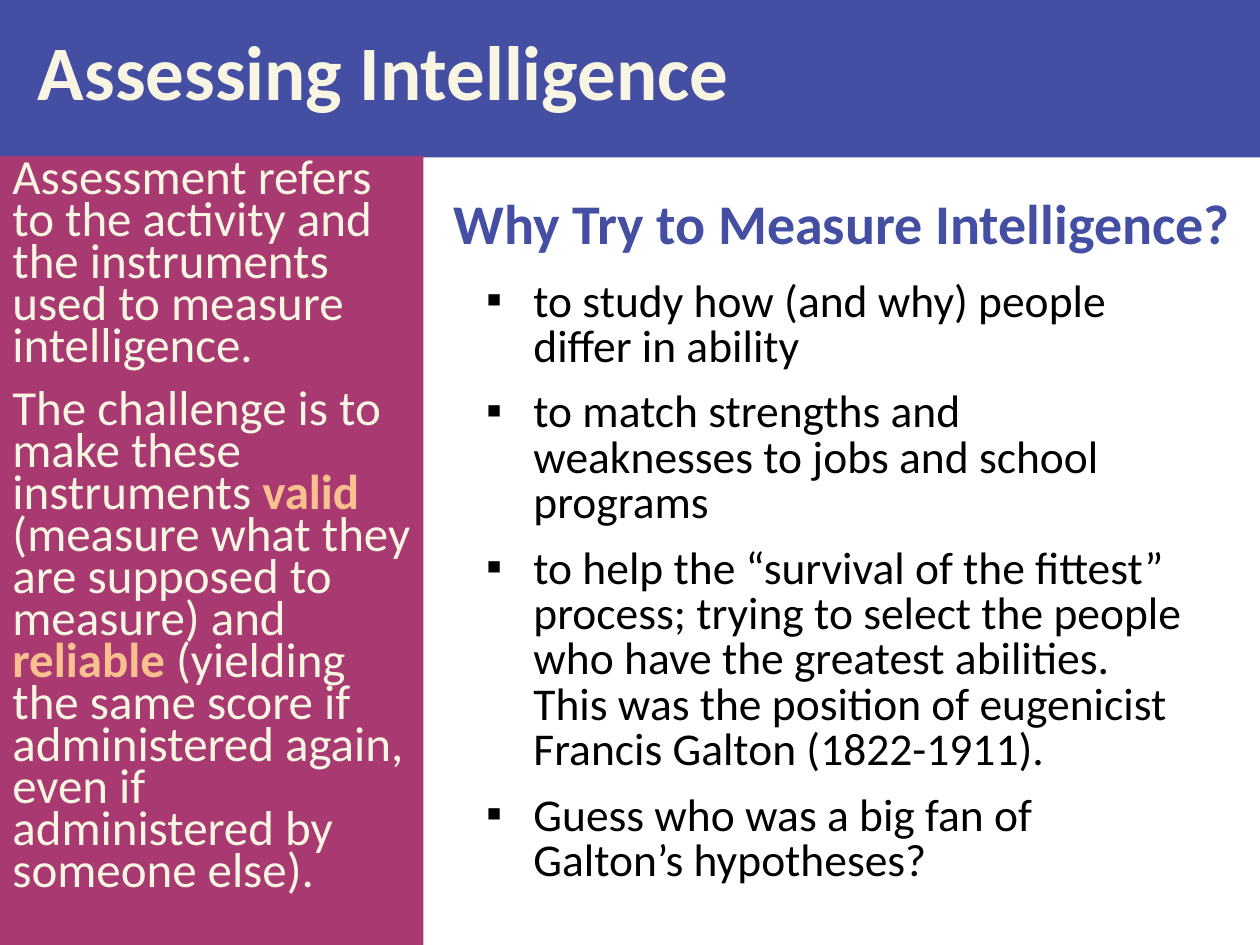
from lxml import etree
from pptx import Presentation
from pptx.dml.color import RGBColor
from pptx.enum.text import MSO_ANCHOR, MSO_AUTO_SIZE, PP_ALIGN
from pptx.oxml.ns import qn
from pptx.util import Pt

LEFT = PP_ALIGN.LEFT
TOP, MIDDLE = MSO_ANCHOR.TOP, MSO_ANCHOR.MIDDLE
NO_AUTOFIT = MSO_AUTO_SIZE.NONE
TITLE_ONLY = 5

FONT = "Calibri"
BLUE, PLUM, CREAM, PEACH, BLACK = "444EA2", "A93971", "F8F6E3", "FAC090", "000000"
BULLET_INDENT = 27

# Each piece of sidebar text is (wording, is a key term)
SIDEBAR = [
    [("Assessment refers to the activity and the instruments used to measure "
      "intelligence.", False)],
    [("The challenge is to make these instruments ", False),
     ("valid ", True),
     ("(measure what they are supposed to measure) and ", False),
     ("reliable ", True),
     ("(yielding the same score if administered again, even if administered "
      "by someone else).", False)],
]
REASONS = [
    "to study how (and why) people differ in ability",
    "to match strengths and weaknesses to jobs and school programs",
    "to help the “survival of the fittest” process; trying to select the people "
    "who have the greatest abilities. This was the position of eugenicist "
    "Francis Galton (1822-1911).",
    "Guess who was a big fan of Galton’s hypotheses?",
]


def color(hex_string):
    return RGBColor.from_string(hex_string)


def place(shape, left, top, width, height, anchor=TOP, fill=None):
    """Position a text shape, fill it and prepare its text frame."""
    shape.left, shape.top = Pt(left), Pt(top)
    shape.width, shape.height = Pt(width), Pt(height)
    if fill:
        shape.fill.solid()
        shape.fill.fore_color.rgb = color(fill)
    frame = shape.text_frame
    frame.word_wrap = True
    frame.auto_size = NO_AUTOFIT
    frame.vertical_anchor = anchor
    return frame


def add_text_area(slide, left, top, width, height, **options):
    box = slide.shapes.add_textbox(0, 0, 0, 0)
    return place(box, left, top, width, height, **options)


def format_run(run, size, hex_string, bold=False):
    run.font.name = FONT
    run.font.size = Pt(size)
    run.font.bold = bold
    run.font.color.rgb = color(hex_string)


def set_line(frame, text, size, hex_string):
    """Write one bold left-aligned line."""
    frame.text = text
    paragraph = frame.paragraphs[0]
    paragraph.alignment = LEFT
    format_run(paragraph.runs[0], size, hex_string, bold=True)
    return paragraph


def add_paragraphs(frame, count, size, line_spacing):
    """Yield evenly spaced paragraphs, starting with the existing one."""
    for index in range(count):
        paragraph = frame.add_paragraph() if index else frame.paragraphs[0]
        paragraph.alignment = LEFT
        paragraph.line_spacing = Pt(line_spacing)
        paragraph.space_before = Pt(0.2 * size)
        paragraph.space_after = Pt(6)
        yield paragraph


def add_bullet(paragraph):
    properties = paragraph._p.get_or_add_pPr()
    properties.set("marL", str(Pt(BULLET_INDENT)))
    properties.set("indent", str(-Pt(BULLET_INDENT)))
    etree.SubElement(properties, qn("a:buFont"), typeface="Arial")
    etree.SubElement(properties, qn("a:buChar"), char="▪")


def add_title(slide):
    frame = place(slide.shapes.title, 0, 0, 720, 90, anchor=MIDDLE, fill=BLUE)
    frame.margin_left = Pt(21.6)
    paragraph = set_line(frame, "Assessing Intelligence", 44, CREAM)
    paragraph.line_spacing = Pt(42)


def add_sidebar(slide):
    frame = add_text_area(slide, 0, 89.3, 242, 450.7, fill=PLUM)
    paragraphs = add_paragraphs(frame, len(SIDEBAR), 28, 24)
    for paragraph, pieces in zip(paragraphs, SIDEBAR):
        for wording, is_key in pieces:
            run = paragraph.add_run()
            run.text = wording
            format_run(run, 28, PEACH if is_key else CREAM, bold=is_key)


def add_reasons(slide):
    frame = add_text_area(slide, 270.7, 157, 417, 298)
    paragraphs = add_paragraphs(frame, len(REASONS), 26, 26)
    for paragraph, reason in zip(paragraphs, REASONS):
        paragraph.text = reason
        format_run(paragraph.runs[0], 26, BLACK)
        add_bullet(paragraph)


def main():
    presentation = Presentation()
    presentation.slide_width, presentation.slide_height = Pt(720), Pt(540)
    slide = presentation.slides.add_slide(presentation.slide_layouts[TITLE_ONLY])

    # Title band and definition sidebar
    add_title(slide)
    add_sidebar(slide)

    # Reasons with their heading
    add_reasons(slide)
    heading = add_text_area(slide, 252, 96.5, 468, 60.5, anchor=MIDDLE)
    set_line(heading, "Why Try to Measure Intelligence?", 32, BLUE)

    presentation.save("out.pptx")


if __name__ == "__main__":
    main()
